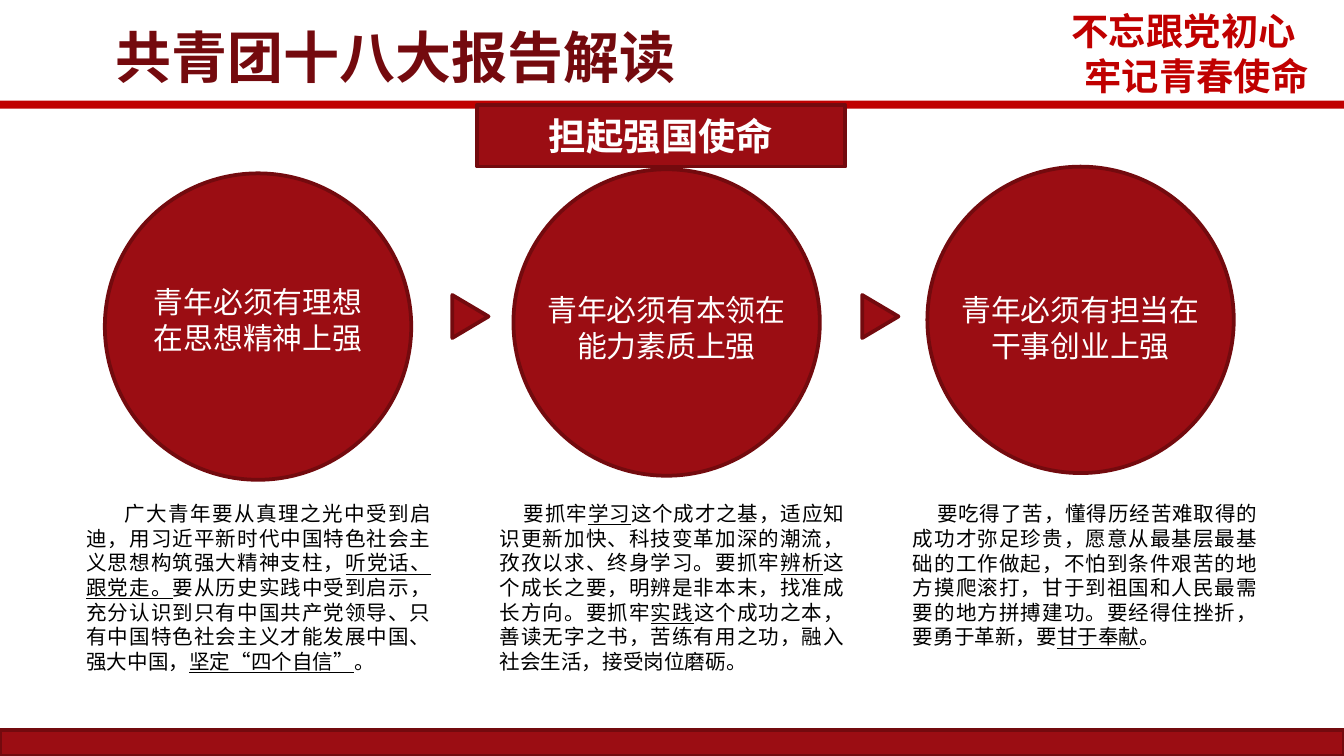
"""Build the slide on a grid of 0.1 inch cells, 100 columns wide."""
import pptx
import pptx.dml.color
import pptx.enum.shapes
import pptx.enum.text
import pptx.oxml.ns
import pptx.util

FACE = "Noto Sans CJK SC"
RED, DARK, BRIGHT = "9B0D13", "730A0E", "C00000"
WHITE, BLACK, WINE = "FFFFFF", "000000", "740A0E"
KIND = pptx.enum.shapes.MSO_SHAPE
ALIGN = pptx.enum.text.PP_ALIGN
PITCH = 30.75

STEPS = [
    ((7.8, 12.9), 20.6, 2.8, ["青年必须有理想", "在思想精神上强"],
     "广大青年要从真理之光中受到启迪，用习近平新时代中国特色社会主义思想构筑强大精神支柱，"
     "_听党话、跟党走。_要从历史实践中受到启示，充分认识到只有中国共产党领导、"
     "只有中国特色社会主义才能发展中国、强大中国，_坚定“四个自信”_。"),
    ((38.2, 12.6), 21.2, 1.8, ["青年必须有本领在能力素质上强"],
     "要抓牢_学习_这个成才之基，适应知识更新加快、科技变革加深的潮流，孜孜以求、终身学习。"
     "要抓牢_辨析_这个成长之要，明辨是非本末，找准成长方向。"
     "要抓牢_实践_这个成功之本，善读无字之书，苦练有用之功，融入社会生活，接受岗位磨砺。"),
    ((69, 12.4), 21.2, 1.8, ["青年必须有担当在干事创业上强"],
     "要吃得了苦，懂得历经苦难取得的成功才弥足珍贵，愿意从最基层最基础的工作做起，"
     "不怕到条件艰苦的地方摸爬滚打，甘于到祖国和人民最需要的地方拼搏建功。"
     "要经得住挫折，要勇于革新，要_甘于奉献_。"),
]


def cell(count):
    """Turn a count of grid cells into a length."""
    return pptx.util.Inches(count / 10)


def tint(part, code):
    """Give a font, a fill or a line a solid colour."""
    if hasattr(part, "solid"):
        part.solid()
        part = part.fore_color
    else:
        part = part.color
    part.rgb = pptx.dml.color.RGBColor.from_string(code)


def adorn(thing, style):
    """Set each attribute named in a dict of format values."""
    for name, value in style.items():
        setattr(thing, name, value)


def write(frame, lines, size, code, bold=False, align=ALIGN.CENTER, shifts=(0,), first=0):
    """Fill a text frame; text between underscores is underlined."""
    for row, line in enumerate(lines):
        para = frame.add_paragraph() if row else frame.paragraphs[0]
        adorn(para, {"alignment": align, "line_spacing": pptx.util.Pt(size * 1.2)})
        props = para._p.get_or_add_pPr()
        props.set("marL", str(cell(shifts[row % len(shifts)])))
        props.set("indent", str(cell(first)))
        for turn, words in enumerate(line.split("_")):
            run = para.add_run()
            run.text = words
            adorn(run.font, {"size": pptx.util.Pt(size), "name": FACE,
                             "bold": bold, "underline": turn % 2 == 1})
            tint(run.font, code)
            east = run._r.rPr.makeelement(pptx.oxml.ns.qn("a:ea"), {"typeface": FACE})
            run._r.rPr.append(east)


def label(home, box, lines, size, code, pad=(1, 0.5), **more):
    """Add a wrapping text box."""
    frame = home.add_textbox(*map(cell, box)).text_frame
    side, edge = map(cell, pad)
    adorn(frame, {"word_wrap": True, "margin_left": side, "margin_right": side,
                  "margin_top": edge, "margin_bottom": edge,
                  "auto_size": pptx.enum.text.MSO_AUTO_SIZE.SHAPE_TO_FIT_TEXT})
    write(frame, lines, size, code, **more)


def block(home, kind, box, fill=RED, edge=DARK, turn=0):
    """Add a flat preset shape, outlined unless edge is None."""
    shape = home.add_shape(kind, *map(cell, box))
    shape.shadow.inherit = False
    shape.rotation = turn
    tint(shape.fill, fill)
    if edge:
        tint(shape.line, edge)
        shape.line.width = pptx.util.Pt(2)
    else:
        shape.line.fill.background()
    return shape


def step(home, col, spot, top, first, name, body):
    """Add one column: body text and a disc with its name."""
    tall = 12.1 if col == 2 else 14
    label(home, (5.45 + col * PITCH, 36.8, 27.6, tall), [body], 11, BLACK,
          align=ALIGN.JUSTIFY, first=first)
    group = home.add_group_shape().shapes
    left, high = spot
    block(group, KIND.OVAL, (left, high, 22.8, 22.8))
    label(group, (left + 1.55, top, 19.7, 6.4), name, 16, WHITE, pad=(0.9, 0.5))


def main():
    """Build and save the slide."""
    deck = pptx.Presentation()
    adorn(deck, {"slide_width": cell(100), "slide_height": cell(56.25)})
    home = deck.slides.add_slide(deck.slide_layouts[6]).shapes
    block(home, KIND.RECTANGLE, (0, 54.3, 100, 1.95))
    block(home, KIND.RECTANGLE, (0, 7.5, 100, 0.6), BRIGHT, None)
    label(home, (77.6, 0.1, 22.9, 7.7), ["不忘跟党初心", "牢记青春使命"], 20, BRIGHT,
          bold=True, align=ALIGN.LEFT, shifts=(1.15, 2.1))
    for col, (spot, top, first, name, body) in enumerate(STEPS):
        step(home, col, spot, top, first, name, body)
    for left in (63.9, 33.4):
        block(home, KIND.ISOSCELES_TRIANGLE, (left, 22.2, 3.2, 2.7), turn=90)
    label(home, (7.9, 1.3, 55.6, 5.8), ["共青团十八大报告解读"], 30, WINE,
          pad=(0.7, 0.4), bold=True, align=ALIGN.LEFT)
    banner = block(home, KIND.RECTANGLE, (35.5, 7.8, 27.4, 4.6)).text_frame
    banner.vertical_anchor = pptx.enum.text.MSO_ANCHOR.MIDDLE
    write(banner, ["担起强国使命"], 20, WHITE, bold=True)
    deck.save("out.pptx")


if __name__ == "__main__":
    main()
